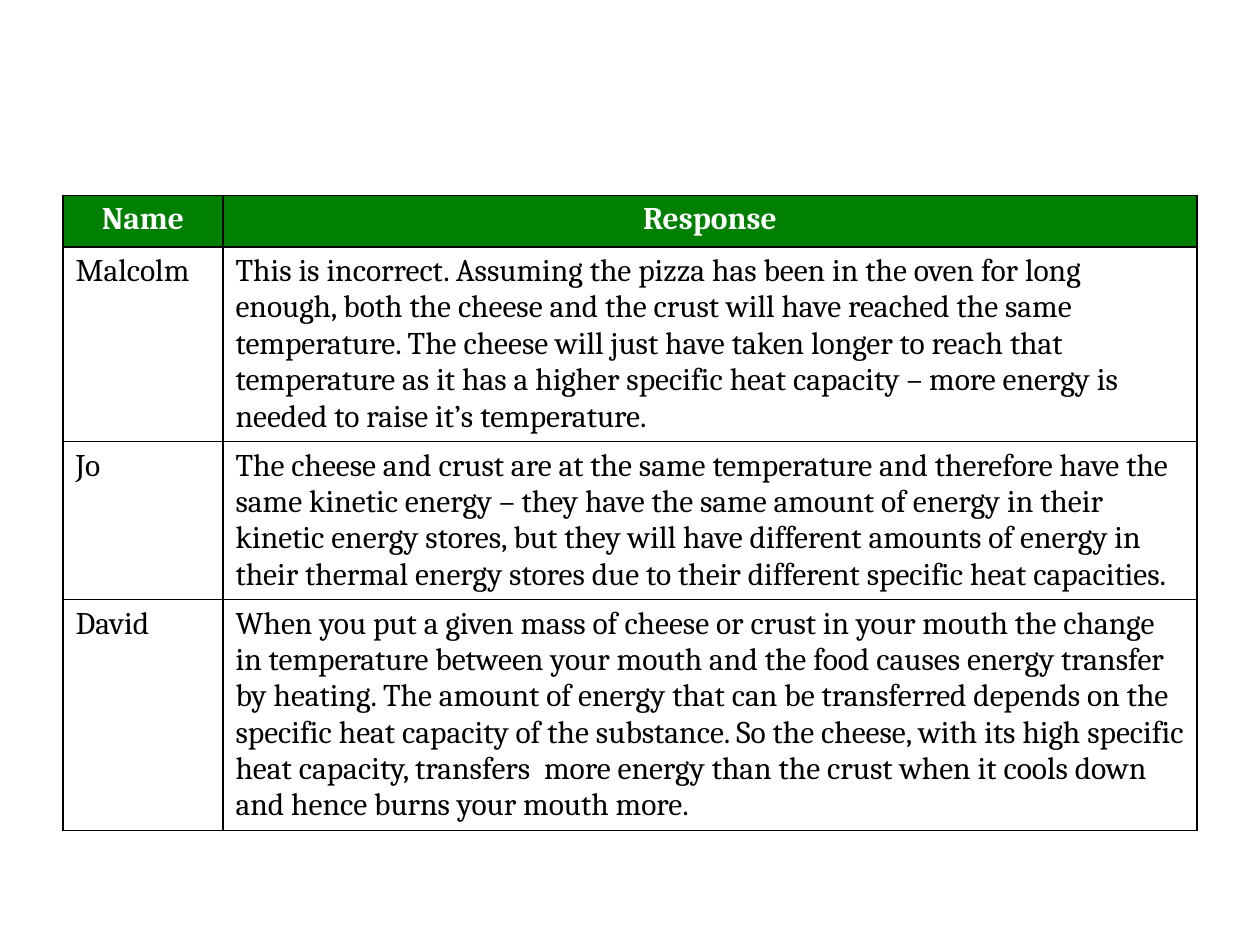
from lxml import etree
from pptx import Presentation
from pptx.dml.color import RGBColor
from pptx.enum import text
from pptx.oxml.ns import qn
from pptx.util import Inches, Pt

GREEN = RGBColor(0x00, 0x80, 0x00)
WHITE = RGBColor(0xFF, 0xFF, 0xFF)
BLACK = RGBColor(0x00, 0x00, 0x00)
FONT = "Cambria"
COL_WIDTHS = (1.27, 7.73)
ROW_HEIGHT = 0.41

HEADER = ("Name", "Response")
RESPONSES = [
    ("Malcolm",
     "This is incorrect. Assuming the pizza has been in the oven for long enough, "
     "both the cheese and the crust will have reached the same temperature. The "
     "cheese will just have taken longer to reach that temperature as it has a "
     "higher specific heat capacity – more energy is needed to raise it’s "
     "temperature."),
    ("Jo",
     "The cheese and crust are at the same temperature and therefore have the same "
     "kinetic energy – they have the same amount of energy in their kinetic energy "
     "stores, but they will have different amounts of energy in their thermal "
     "energy stores due to their different specific heat capacities."),
    ("David",
     "When you put a given mass of cheese or crust in your mouth the change in "
     "temperature between your mouth and the food causes energy transfer by "
     "heating. The amount of energy that can be transferred depends on the "
     "specific heat capacity of the substance. So the cheese, with its high "
     "specific heat capacity, transfers  more energy than the crust when it cools "
     "down and hence burns your mouth more."),
]


def write(tf, content, size=18, color=BLACK, bold=False,
          align=text.PP_ALIGN.LEFT):
    p = tf.paragraphs[0]
    p.alignment = align
    r = p.add_run()
    r.text = content
    r.font.name = FONT
    r.font.size = Pt(size)
    r.font.bold = bold
    r.font.color.rgb = color


def set_borders(cell, color=BLACK, width=1):
    """Line all four sides; the lines must come before the fill in tcPr."""
    tc_pr = cell._tc.get_or_add_tcPr()
    for i, side in enumerate(("a:lnL", "a:lnR", "a:lnT", "a:lnB")):
        ln = etree.Element(qn(side), w=str(Pt(width)))
        fill = etree.SubElement(ln, qn("a:solidFill"))
        etree.SubElement(fill, qn("a:srgbClr"), val=str(color))
        tc_pr.insert(i, ln)


def add_response_table(s, left, top):
    rows = [HEADER, *RESPONSES]
    frame = s.shapes.add_table(
        len(rows), len(HEADER), Inches(left), Inches(top),
        Inches(sum(COL_WIDTHS)), Inches(ROW_HEIGHT * len(rows)))
    table = frame.table
    for column, width in zip(table.columns, COL_WIDTHS):
        column.width = Inches(width)
    for i, row in enumerate(rows):
        table.rows[i].height = Inches(ROW_HEIGHT)
        for j, content in enumerate(row):
            cell = table.cell(i, j)
            cell.fill.solid()
            cell.fill.fore_color.rgb = WHITE if i else GREEN
            set_borders(cell)
            if i:
                write(cell.text_frame, content)
            else:
                write(cell.text_frame, content, color=WHITE, bold=True,
                      align=text.PP_ALIGN.CENTER)


def main():
    prs = Presentation()
    prs.slide_width, prs.slide_height = Inches(10), Inches(7.5)
    s = prs.slides.add_slide(prs.slide_layouts[6])
    add_response_table(s, left=0.5, top=1.55)
    prs.save("out.pptx")


if __name__ == "__main__":
    main()
